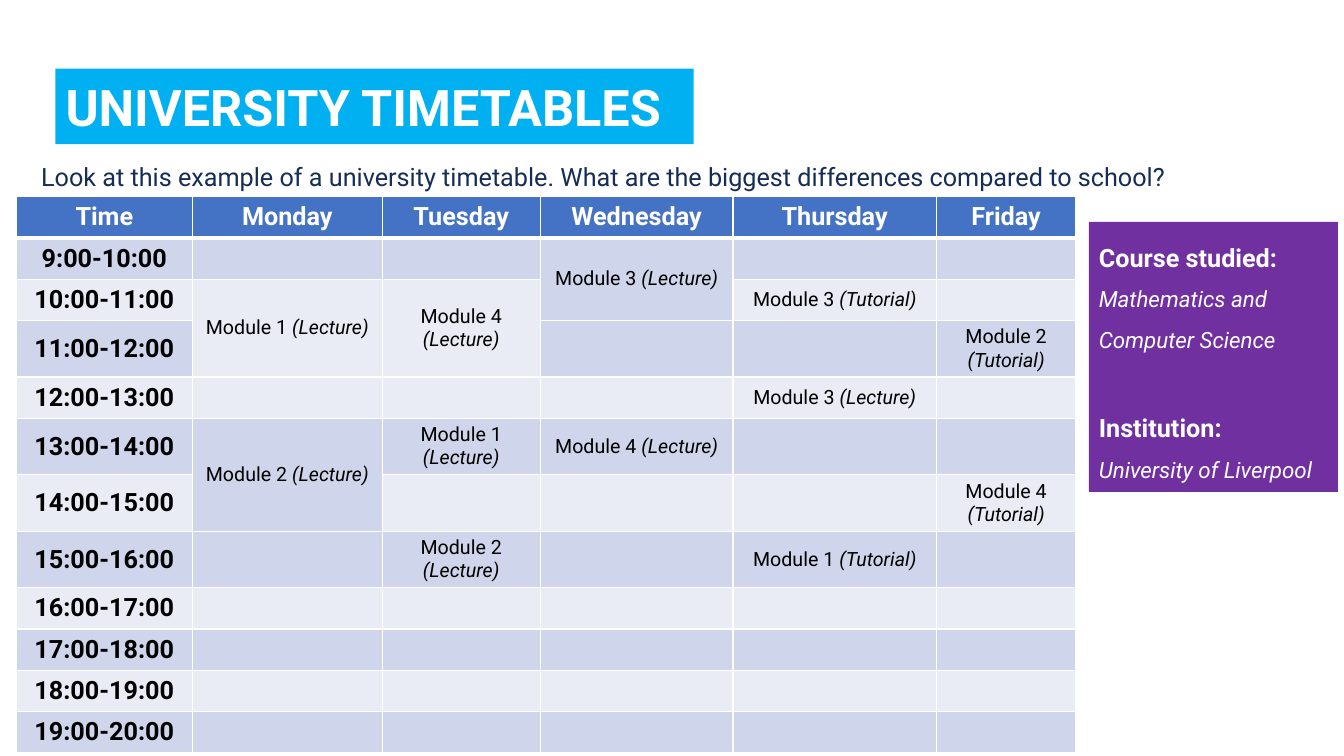
from dataclasses import dataclass

from lxml import etree
from pptx import Presentation
from pptx import util as u
from pptx.dml.color import RGBColor
from pptx.enum import shapes, text
from pptx.oxml import ns
from pptx.slide import Slide
from pptx.table import _Cell
from pptx.text.text import _Paragraph

PX = 9144  # EMU per px, 100 px to the inch
FONT = "Roboto"

WHITE = RGBColor(0xFF, 0xFF, 0xFF)
BLACK = RGBColor(0x00, 0x00, 0x00)
NAVY = RGBColor(0x16, 0x2D, 0x56)
CYAN = RGBColor(0x00, 0xB0, 0xF0)
PURPLE = RGBColor(0x70, 0x30, 0xA0)
HEADER_BLUE = RGBColor(0x44, 0x72, 0xC4)
BAND_DARK = RGBColor(0xCF, 0xD5, 0xEA)
BAND_LIGHT = RGBColor(0xE9, 0xEB, 0xF5)

FIRST_HOUR, LAST_HOUR = 9, 19
ROW_HEIGHT = 41
COLUMNS = {"Time": 175, "Monday": 188, "Tuesday": 157,
           "Wednesday": 191, "Thursday": 202, "Friday": 138}


@dataclass(frozen=True)
class Session:
    day: str
    hour: int
    module: int
    kind: str = "Lecture"
    hours: int = 1


@dataclass(frozen=True)
class PanelLine:
    wording: str
    heading: bool = False
    gap_before: int = 0


SESSIONS = [
    Session("Monday", 10, 1, hours=2),
    Session("Monday", 13, 2, hours=2),
    Session("Tuesday", 10, 4, hours=2),
    Session("Tuesday", 13, 1),
    Session("Tuesday", 15, 2),
    Session("Wednesday", 9, 3, hours=2),
    Session("Wednesday", 13, 4),
    Session("Thursday", 10, 3, "Tutorial"),
    Session("Thursday", 12, 3),
    Session("Thursday", 15, 1, "Tutorial"),
    Session("Friday", 11, 2, "Tutorial"),
    Session("Friday", 14, 4, "Tutorial"),
]

PANEL_LINES = [
    PanelLine("Course studied:", heading=True),
    PanelLine("Mathematics and Computer Science"),
    PanelLine("Institution:", heading=True, gap_before=32),
    PanelLine("University of Liverpool"),
]


def px(*lengths: int) -> list[u.Emu]:
    return [u.Emu(length * PX) for length in lengths]


def add_text(paragraph: _Paragraph, wording: str, *, size: int, color: RGBColor,
             bold: bool = False, italic: bool = False) -> None:
    run = paragraph.add_run()
    run.text = wording
    run.font.name = FONT
    run.font.size = u.Pt(size)
    run.font.color.rgb = color
    run.font.bold = bold
    run.font.italic = italic


def format_cell(cell: _Cell, fill: RGBColor, top: int, bottom: int) -> None:
    properties = cell._tc.get_or_add_tcPr()
    for side, points in (("L", 1), ("R", 1), ("T", top), ("B", bottom)):
        line = etree.SubElement(properties, ns.qn(f"a:ln{side}"), w=str(u.Pt(points)))
        solid = etree.SubElement(line, ns.qn("a:solidFill"))
        etree.SubElement(solid, ns.qn("a:srgbClr"), val=str(WHITE))
    cell.fill.solid()
    cell.fill.fore_color.rgb = fill
    cell.vertical_anchor = text.MSO_ANCHOR.MIDDLE
    cell.text_frame.paragraphs[0].alignment = text.PP_ALIGN.CENTER


def add_title(slide: Slide) -> None:
    title = slide.shapes.title
    title.left, title.top, title.width, title.height = px(55, 68, 633, 75)
    title.fill.solid()
    title.fill.fore_color.rgb = CYAN
    frame = title.text_frame
    frame.auto_size = text.MSO_AUTO_SIZE.NONE
    frame.vertical_anchor = text.MSO_ANCHOR.MIDDLE
    frame.paragraphs[0].alignment = text.PP_ALIGN.LEFT
    add_text(frame.paragraphs[0], "UNIVERSITY TIMETABLES", size=36, color=WHITE, bold=True)


def add_question(slide: Slide) -> None:
    frame = slide.shapes.add_textbox(*px(31, 155, 1219, 40)).text_frame
    frame.word_wrap = True
    add_text(frame.paragraphs[0], "Look at this example of a university timetable. "
             "What are the biggest differences compared to school?", size=18, color=NAVY)


def add_timetable(slide: Slide) -> None:
    row_count = LAST_HOUR - FIRST_HOUR + 2
    days = list(COLUMNS)
    table = slide.shapes.add_table(
        row_count, len(days),
        *px(16, 195, sum(COLUMNS.values()), ROW_HEIGHT * row_count)).table
    table.horz_banding = False
    for column, width in zip(table.columns, COLUMNS.values()):
        column.width = u.Emu(width * PX)

    # Fills and borders
    for index, row in enumerate(table.rows):
        row.height = u.Emu(ROW_HEIGHT * PX)
        band = BAND_DARK if index % 2 else BAND_LIGHT
        for cell in row.cells:
            format_cell(cell, band if index else HEADER_BLUE,
                        top=3 if index == 1 else 1, bottom=1 if index else 3)

    # Day and hour headings
    for index, day in enumerate(days):
        add_text(table.cell(0, index).text_frame.paragraphs[0], day,
                 size=18, color=WHITE, bold=True)
    for index, hour in enumerate(range(FIRST_HOUR, LAST_HOUR + 1), start=1):
        add_text(table.cell(index, 0).text_frame.paragraphs[0],
                 f"{hour}:00-{hour + 1}:00", size=18, color=BLACK, bold=True)

    # Sessions
    for session in SESSIONS:
        row, column = session.hour - FIRST_HOUR + 1, days.index(session.day)
        cell = table.cell(row, column)
        if session.hours > 1:
            cell.merge(table.cell(row + session.hours - 1, column))
        paragraph = cell.text_frame.paragraphs[0]
        add_text(paragraph, f"Module {session.module} ", size=14, color=BLACK)
        add_text(paragraph, f"({session.kind})", size=14, color=BLACK, italic=True)


def add_course_panel(slide: Slide) -> None:
    panel = slide.shapes.add_shape(shapes.MSO_SHAPE.RECTANGLE, *px(1080, 220, 247, 268))
    panel.shadow.inherit = False
    panel.fill.solid()
    panel.fill.fore_color.rgb = PURPLE
    panel.line.fill.background()
    frame = panel.text_frame
    frame.word_wrap = True
    frame.vertical_anchor = text.MSO_ANCHOR.TOP
    for index, line in enumerate(PANEL_LINES):
        paragraph = frame.add_paragraph() if index else frame.paragraphs[0]
        paragraph.alignment = text.PP_ALIGN.LEFT
        paragraph.line_spacing = 1.5
        if line.gap_before:
            paragraph.space_before = u.Pt(line.gap_before)
        add_text(paragraph, line.wording, size=18 if line.heading else 16,
                 color=WHITE, bold=line.heading, italic=not line.heading)


def main() -> None:
    presentation = Presentation()
    presentation.slide_width, presentation.slide_height = px(1333, 750)
    title_only = presentation.slide_layouts.get_by_name("Title Only")
    slide = presentation.slides.add_slide(title_only)
    add_title(slide)
    add_timetable(slide)
    add_question(slide)
    add_course_panel(slide)
    presentation.save("out.pptx")


if __name__ == "__main__":
    main()
